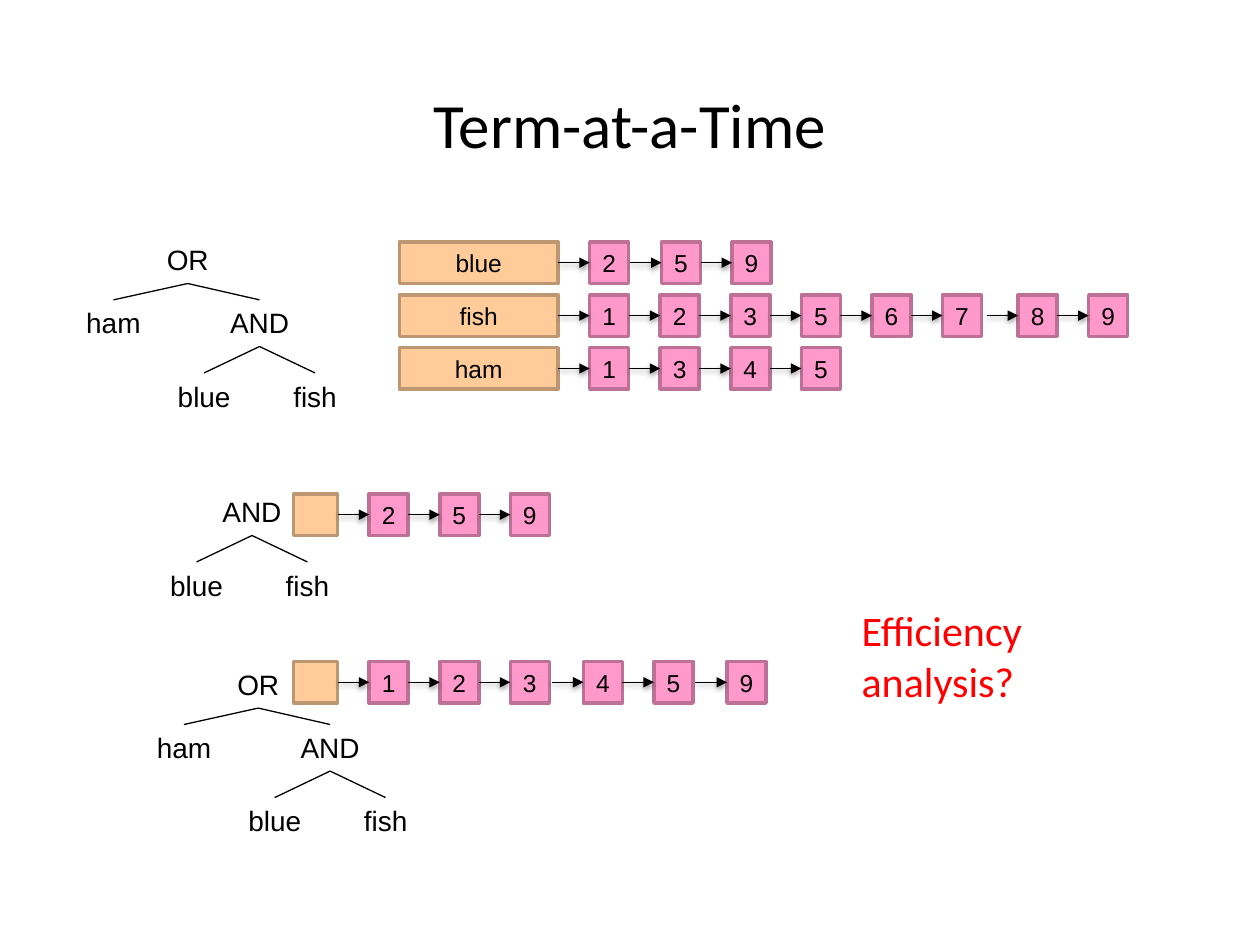
from pptx import Presentation
from pptx.dml.color import RGBColor
from pptx.enum.shapes import MSO_CONNECTOR, MSO_SHAPE
from pptx.enum.text import MSO_ANCHOR, PP_ALIGN
from pptx.oxml import parse_xml
from pptx.oxml.ns import nsdecls
from pptx.util import Inches, Pt

STRAIGHT = MSO_CONNECTOR.STRAIGHT
RECTANGLE = MSO_SHAPE.RECTANGLE
MIDDLE = MSO_ANCHOR.MIDDLE
TOP = MSO_ANCHOR.TOP
CENTER = PP_ALIGN.CENTER
LEFT = PP_ALIGN.LEFT

BLACK = RGBColor(0x00, 0x00, 0x00)
RED = RGBColor(0xFF, 0x00, 0x00)
PINK = RGBColor(0xFF, 0x99, 0xCC)
PINK_EDGE = RGBColor(0xBD, 0x71, 0x97)
ORANGE = RGBColor(0xFF, 0xCC, 0x99)
ORANGE_EDGE = RGBColor(0xBD, 0x97, 0x71)

CELL_WIDTH, CELL_HEIGHT = 0.31, 0.33
ARROW_LENGTH = 0.25
NODE_HEIGHT = 0.37
NODE_WIDTHS = {"blue": 0.62, "fish": 0.55, "ham": 0.64, "AND": 0.67, "OR": 0.54}

ARROWHEAD = f'<a:tailEnd {nsdecls("a")} type="triangle"/>'
NO_EFFECT = f'<a:effectLst {nsdecls("a")}/>'
SOFT_SHADOW = (
    f'<a:effectLst {nsdecls("a")}>'
    f'<a:outerShdw blurRad="{Pt(3.1)}" dist="{Pt(1.6)}" dir="5400000" rotWithShape="0">'
    '<a:srgbClr val="000000"><a:alpha val="38000"/></a:srgbClr>'
    '</a:outerShdw></a:effectLst>'
)


def write(frame, text, size, font="Arial", color=BLACK, align=CENTER):
    para = frame.paragraphs[0]
    para.text = text
    para.alignment = align
    para.font.size = Pt(size)
    para.font.name = font
    para.font.color.rgb = color


def add_text(slide, text, left, top, width, height, size, wrap=True, anchor=TOP, **style):
    box = slide.shapes.add_textbox(Inches(left), Inches(top), Inches(width), Inches(height))
    box.text_frame.word_wrap = wrap
    box.text_frame.vertical_anchor = anchor
    write(box.text_frame, text, size, **style)


def add_line(slide, start, end, arrow=False):
    """Draw a thin line; an arrow gets a head and a soft shadow."""
    line = slide.shapes.add_connector(STRAIGHT, *(Inches(value) for value in start + end))
    line.line.color.rgb = BLACK
    line.line.width = Pt(0.75)
    if arrow:
        line.line._get_or_add_ln().append(parse_xml(ARROWHEAD))
    line._element.spPr.append(parse_xml(SOFT_SHADOW if arrow else NO_EFFECT))


def add_cell(slide, text, left, top, width, fill, edge):
    cell = slide.shapes.add_shape(
        RECTANGLE, Inches(left), Inches(top), Inches(width), Inches(CELL_HEIGHT))
    cell.shadow.inherit = False
    cell.fill.solid()
    cell.fill.fore_color.rgb = fill
    cell.line.color.rgb = edge
    cell.line.width = Pt(2)
    if text:
        cell.text_frame.word_wrap = False
        cell.text_frame.vertical_anchor = MIDDLE
        write(cell.text_frame, text, 14)


def add_postings(slide, term, left, top, width, documents, nudges=None):
    """Draw a term and its linked documents; nudges widen the gap before some of them."""
    nudges = nudges or {}
    add_cell(slide, term, left, top, width, ORANGE, ORANGE_EDGE)
    right = left + width
    middle = top + CELL_HEIGHT / 2
    for document in documents:
        start = right + nudges.get(document, 0)
        cell_left = start + ARROW_LENGTH
        add_cell(slide, str(document), cell_left, top, CELL_WIDTH, PINK, PINK_EDGE)
        add_line(slide, (start, middle), (cell_left, middle), arrow=True)
        right = cell_left + CELL_WIDTH


def add_node(slide, label, center, top):
    width = NODE_WIDTHS[label]
    add_text(slide, label, center - width / 2, top, width, NODE_HEIGHT, 16, wrap=False)


def add_branch(slide, operator, center, top, operands, drop):
    """Draw an operator with lines to operands, given as (label, x offset)."""
    add_node(slide, operator, center, top)
    for label, offset in operands:
        add_line(slide, (center, top + NODE_HEIGHT), (center + offset, top + drop))
        if label:
            add_node(slide, label, center + offset, top + drop)


def add_and_tree(slide, center, top):
    add_branch(slide, "AND", center, top, [("blue", -0.44), ("fish", 0.44)], 0.58)


def add_or_tree(slide, center, top):
    add_branch(slide, "OR", center, top, [("ham", -0.59), (None, 0.57)], 0.5)
    add_and_tree(slide, center + 0.57, top + 0.5)


def main():
    deck = Presentation()
    deck.slide_width, deck.slide_height = Inches(10), Inches(7.5)
    slide = deck.slides.add_slide(deck.slide_layouts[6])

    add_text(slide, "Term-at-a-Time", 0, 0.6, 10, 0.75, 36, anchor=MIDDLE, font="Calibri")

    add_or_tree(slide, 1.49, 1.88)
    index = [
        ("blue", [2, 5, 9], {5: 0.01}),
        ("fish", [1, 2, 3, 5, 6, 7, 8, 9], {8: 0.04}),
        ("ham", [1, 3, 4, 5], None),
    ]
    for row, (term, documents, nudges) in enumerate(index):
        add_postings(slide, term, 3.17, 1.92 + 0.42 * row, 1.26, documents, nudges)

    add_and_tree(slide, 2, 3.88)
    add_postings(slide, "", 2.33, 3.92, 0.35, [2, 5, 9])

    add_or_tree(slide, 2.05, 5.25)
    add_postings(slide, "", 2.33, 5.25, 0.35, [1, 2, 3, 4, 5, 9], {4: 0.02, 9: 0.02})

    add_text(slide, "Efficiency analysis?", 6.74, 4.75, 2.68, 0.5, 24,
             font="Calibri", color=RED, align=LEFT)

    deck.save("out.pptx")


if __name__ == "__main__":
    main()
